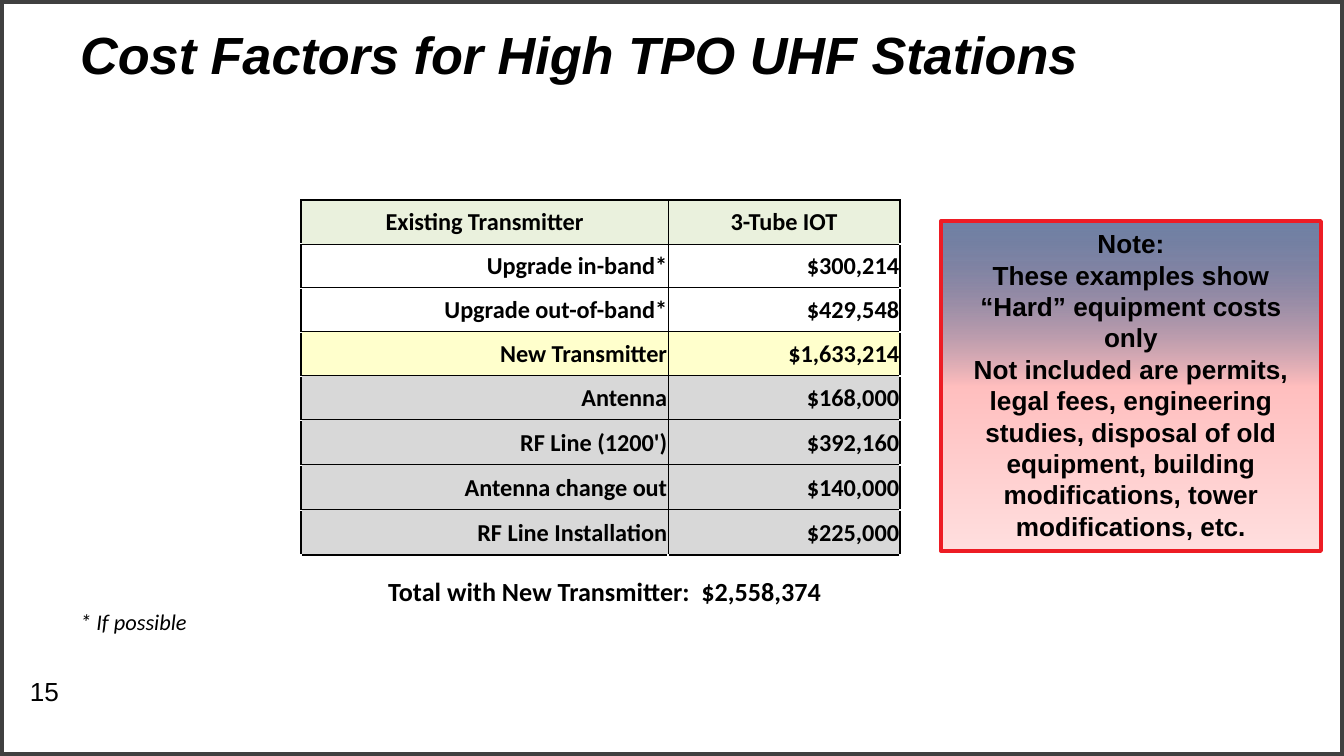
from lxml import etree
from pptx import Presentation
from pptx.dml.color import RGBColor
from pptx.enum.shapes import MSO_SHAPE as Shape
from pptx.enum.text import MSO_ANCHOR as Anchor, MSO_AUTO_SIZE as AutoSize, PP_ALIGN as Align
from pptx.oxml import parse_xml
from pptx.oxml.ns import nsdecls, qn
from pptx.util import Pt

PX = 9144000 / 1344
BLACK = RGBColor(0x00, 0x00, 0x00)
WHITE = RGBColor(0xFF, 0xFF, 0xFF)
FRAME_GREY = RGBColor(0x40, 0x40, 0x40)
HEADER_GREEN = RGBColor(0xEA, 0xF1, 0xDD)
YELLOW = RGBColor(0xFF, 0xFF, 0xCC)
GREY = RGBColor(0xD8, 0xD8, 0xD8)
RED = RGBColor(0xED, 0x1C, 0x24)


def box(*lengths):
    return [round(length * PX) for length in lengths]


def write(text_frame, lines, align, **font_values):
    text_frame.word_wrap = True
    for index, line in enumerate(lines):
        paragraph = text_frame.paragraphs[0] if index == 0 else text_frame.add_paragraph()
        paragraph.alignment = align
        run = paragraph.add_run()
        run.text = line
        run.font.color.rgb = BLACK
        for name, value in font_values.items():
            setattr(run.font, name, value)


presentation = Presentation()
presentation.slide_width, presentation.slide_height = box(1344, 756)
slide = presentation.slides.add_slide(presentation.slide_layouts[6])

# Slide frame
frame = slide.shapes.add_shape(Shape.RECTANGLE, *box(0, 0, 1344, 756))
frame.shadow.inherit = False
frame.fill.background()
frame.line.color.rgb = FRAME_GREY
frame.line.width = Pt(4.5)

# Cost table, with a blank margin all around the bordered block
costs = [
    ("Existing Transmitter", "3-Tube IOT", HEADER_GREEN),
    ("Upgrade in-band*", "$300,214", WHITE),
    ("Upgrade out-of-band*", "$429,548", WHITE),
    ("New Transmitter", "$1,633,214", YELLOW),
    ("Antenna", "$168,000", GREY),
    ("RF Line (1200')", "$392,160", GREY),
    ("Antenna change out", "$140,000", GREY),
    ("RF Line Installation", "$225,000", GREY),
]
column_widths = [43, 367, 232, 30]
row_heights = [45, 44, 44, 44, 44, 44, 45, 45, 45, 46]
last_row, last_column = len(costs), 2
table = slide.shapes.add_table(
    len(row_heights), len(column_widths),
    *box(258, 155, sum(column_widths), sum(row_heights))).table
table.first_row = table.horz_banding = False
for column, width in zip(table.columns, column_widths):
    column.width = round(width * PX)
for row, height in zip(table.rows, row_heights):
    row.height = round(height * PX)

for y in range(len(row_heights)):
    for x in range(len(column_widths)):
        cell = table.cell(y, x)
        cell.margin_left = cell.margin_right = cell.margin_top = round(PX)
        cell.margin_bottom = 0
        cell.vertical_anchor = Anchor.MIDDLE
        cell.fill.solid()
        cell.fill.fore_color.rgb = WHITE
        in_rows, in_columns = 1 <= y <= last_row, 1 <= x <= last_column
        if in_rows and in_columns:
            cost = costs[y - 1]
            cell.fill.fore_color.rgb = cost[2]
            write(cell.text_frame, [cost[x - 1]], Align.CENTER if y == 1 else Align.RIGHT,
                  name="Calibri", size=Pt(13), bold=True)

        # Borders: 1 pt around the block, 0.5 pt inside it
        edges = [("lnL", x, in_rows, last_column), ("lnR", x + 1, in_rows, last_column),
                 ("lnT", y, in_columns, last_row), ("lnB", y + 1, in_columns, last_row)]
        properties = cell._tc.get_or_add_tcPr()
        position = 0
        for tag, edge, beside_block, last in edges:
            if beside_block and 1 <= edge <= last + 1:
                width = Pt(1) if edge in (1, last + 1) else Pt(0.5)
                properties.insert(position, parse_xml(
                    f'<a:{tag} {nsdecls("a")} w="{width}"><a:solidFill>'
                    f'<a:srgbClr val="{BLACK}"/></a:solidFill></a:{tag}>'))
                position += 1

# Note with a three-stop gradient
note = slide.shapes.add_shape(Shape.RECTANGLE, *box(941, 221, 380, 330))
note.shadow.inherit = False
note.line.color.rgb = RED
note.line.width = Pt(2)
note.fill.gradient()
note.fill.gradient_angle = 270
stops = note._element.spPr.find(qn("a:gradFill")).find(qn("a:gsLst"))
for stop in list(stops):
    stops.remove(stop)
for percent, color, opacity in [(0, "002060", 56), (50, "FFBEBE", 100), (100, "FFDFDF", 100)]:
    stop = etree.SubElement(stops, qn("a:gs"), pos=str(percent * 1000))
    stop_color = etree.SubElement(stop, qn("a:srgbClr"), val=color)
    if opacity < 100:
        etree.SubElement(stop_color, qn("a:alpha"), val=str(opacity * 1000))
note.text_frame.vertical_anchor = Anchor.TOP
note.text_frame.auto_size = AutoSize.SHAPE_TO_FIT_TEXT
write(note.text_frame, [
    "Note:",
    "These examples show “Hard” equipment costs only",
    "Not included are permits, legal fees, engineering studies, disposal of old "
    "equipment, building modifications, tower modifications, etc.",
], Align.CENTER, name="Arial", size=Pt(14), bold=True)

# Title, total, footnote and page number
texts = [
    ("Cost Factors for High TPO UHF Stations", (67, 16, 1210, 75), Align.LEFT, Anchor.MIDDLE,
     {"name": "Arial", "size": Pt(28), "bold": True, "italic": True}),
    ("Total with New Transmitter:  $2,558,374", (291, 569, 628, 46), Align.CENTER, Anchor.TOP,
     {"name": "Calibri", "size": Pt(14), "bold": True}),
    ("* If possible", (67, 602, 336, 41), Align.LEFT, Anchor.TOP,
     {"name": "Calibri", "size": Pt(12), "italic": True}),
    ("15", (11, 669, 67, 46), Align.CENTER, Anchor.TOP,
     {"name": "Arial", "size": Pt(14)}),
]
for text, place, align, anchor, font_values in texts:
    text_box = slide.shapes.add_textbox(*box(*place))
    text_box.text_frame.vertical_anchor = anchor
    write(text_box.text_frame, [text], align, **font_values)

presentation.save("out.pptx")
